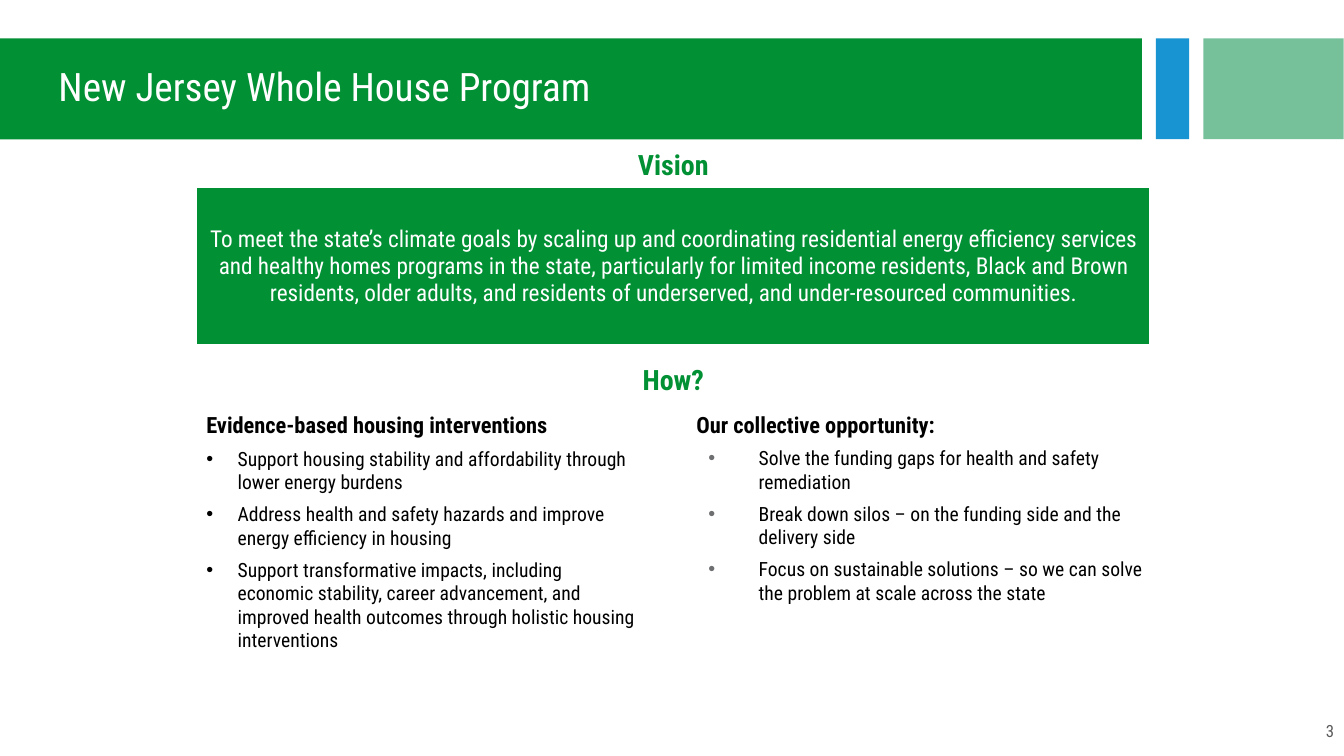
from lxml.etree import SubElement
from pptx import Presentation
from pptx.dml.color import RGBColor as RGB
from pptx.enum.shapes import MSO_SHAPE as SHAPE
from pptx.enum.text import MSO_ANCHOR as ANCHOR, MSO_AUTO_SIZE as FIT, PP_ALIGN as ALIGN
from pptx.oxml.ns import qn
from pptx.util import Cm, Pt

FONT = "Roboto Condensed"
COLORS = {"green": "029035", "blue": "1894D2", "mint": "77C19A", "white": "FFFFFF",
          "black": "000000", "bullet": "6E6F71", "number": "595959"}

TITLE = "New Jersey Whole House Program"
VISION = ("To meet the state’s climate goals by scaling up and coordinating residential "
          "energy efficiency services and healthy homes programs in the state, particularly "
          "for limited income residents, Black and Brown residents, older adults, and "
          "residents of underserved, and under-resourced communities.")
# Section label, top in cm
SECTIONS = [("Vision", 3.71), ("How?", 9.14)]
# Boxes are left, top, width, height in cm; indents are text, bullet in cm
COLUMNS = [
    {"head": "Evidence-based housing interventions",
     "items": ["Support housing stability and affordability through lower energy burdens",
               "Address health and safety hazards and improve energy efficiency in housing",
               "Support transformative impacts, including economic stability, career "
               "advancement, and improved health outcomes through holistic housing interventions"],
     "box": (4.95, 10.24, 11.43, 6.38), "margins": (0.25, 0.13),
     "indent": (0.79, -0.79), "bullet": "black"},
    {"head": "Our collective opportunity:",
     "items": ["Solve the funding gaps for health and safety remediation",
               "Break down silos – on the funding side and the delivery side",
               "Focus on sustainable solutions – so we can solve the problem at scale "
               "across the state"],
     "box": (17.55, 10.36, 11.43, 6.25), "margins": (0, 0),
     "indent": (1.57, -1.27), "bullet": "bullet"},
]
BAND_TOP, BAND_HEIGHT = 0.97, 2.54
BAND_BLOCKS = [("blue", 29.13, 0.84), ("mint", 30.33, 3.53)]
VISION_BOX = (4.95, 4.72, 24.03, 3.99)
BORDERS = [("lnL", 1), ("lnR", 1), ("lnT", 1), ("lnB", 3)]


def rgb(name):
    return RGB.from_string(COLORS[name])


def cm(box):
    return [Cm(v) for v in box]


def write(p, text, size=14, color="black", bold=False, align=None, after=None):
    r = p.add_run()
    r.text = text
    r.font.name, r.font.size, r.font.bold = FONT, Pt(size), bold
    r.font.color.rgb = rgb(color)
    if align is not None:
        p.alignment = align
    if after is not None:
        p.space_after = Pt(after)


def set_margins(tf, x, y):
    tf.margin_left = tf.margin_right = Cm(x)
    tf.margin_top = tf.margin_bottom = Cm(y)


def add_block(s, color, box):
    sp = s.shapes.add_shape(SHAPE.RECTANGLE, *cm(box))
    sp.shadow.inherit = False
    sp.fill.solid()
    sp.fill.fore_color.rgb = rgb(color)
    sp.line.fill.background()
    return sp


def add_text(s, box):
    tf = s.shapes.add_textbox(*cm(box)).text_frame
    tf.word_wrap = True
    return tf


def add_bullet(p, indent, color):
    pPr = p._p.get_or_add_pPr()
    pPr.set("marL", str(Cm(indent[0])))
    pPr.set("indent", str(Cm(indent[1])))
    SubElement(SubElement(pPr, qn("a:buClr")), qn("a:srgbClr"), val=COLORS[color])
    SubElement(pPr, qn("a:buFont"), typeface="Arial")
    SubElement(pPr, qn("a:buChar"), char="•")


prs = Presentation()
prs.slide_width, prs.slide_height = Cm(33.87), Cm(19.05)
s = prs.slides.add_slide(prs.slide_layouts[5])

# Title band
title = s.shapes.title
title.left, title.top, title.width, title.height = cm((-0.05, BAND_TOP, 28.83, BAND_HEIGHT))
title.fill.solid()
title.fill.fore_color.rgb = rgb("green")
tf = title.text_frame
tf.auto_size, tf.word_wrap, tf.vertical_anchor = FIT.NONE, True, ANCHOR.MIDDLE
p = tf.paragraphs[0]
p.line_spacing = 0.9
p._p.get_or_add_pPr().set("marL", str(Cm(1.27)))
write(p, TITLE, size=28, color="white", align=ALIGN.LEFT)
for color, left, width in BAND_BLOCKS:
    add_block(s, color, (left, BAND_TOP, width, BAND_HEIGHT))

# Vision table
table = s.shapes.add_table(1, 1, *cm(VISION_BOX)).table
cell = table.cell(0, 0)
cell.vertical_anchor = ANCHOR.MIDDLE
write(cell.text_frame.paragraphs[0], VISION, size=16.6, color="white", align=ALIGN.CENTER)
tcPr = cell._tc.get_or_add_tcPr()
for side, width in BORDERS:
    ln = SubElement(tcPr, qn("a:" + side), w=str(Pt(width)))
    SubElement(SubElement(ln, qn("a:solidFill")), qn("a:srgbClr"), val=COLORS["white"])
cell.fill.solid()
cell.fill.fore_color.rgb = rgb("green")

# Columns
for col in COLUMNS:
    tf = add_text(s, col["box"])
    set_margins(tf, *col["margins"])
    write(tf.paragraphs[0], col["head"], size=16, bold=True, after=6)
    for item in col["items"]:
        p = tf.add_paragraph()
        add_bullet(p, col["indent"], col["bullet"])
        write(p, item, after=6)

# Section labels
for label, top in SECTIONS:
    tf = add_block(s, "white", (14.33, top, 5.28, 0.81)).text_frame
    set_margins(tf, 0, 0)
    tf.vertical_anchor = ANCHOR.TOP
    write(tf.paragraphs[0], label, size=20, color="green", bold=True, align=ALIGN.CENTER)

# Slide number
tf = add_text(s, (26.25, 18.03, 7.62, 1.02))
write(tf.paragraphs[0], "3", size=12, color="number", align=ALIGN.RIGHT)

prs.save("out.pptx")
